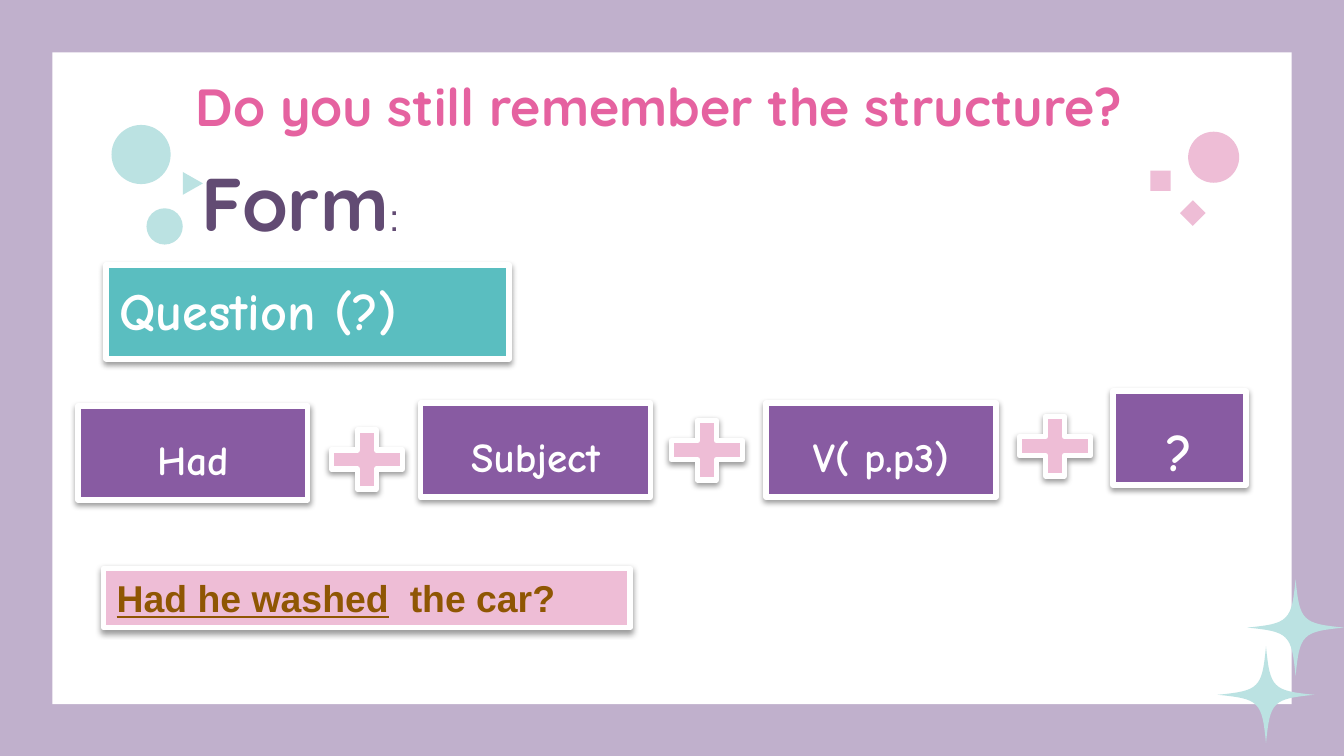
import math

from lxml import etree
from pptx import Presentation
from pptx.dml.color import RGBColor
from pptx.enum.shapes import MSO_SHAPE
from pptx.enum.text import MSO_ANCHOR, PP_ALIGN
from pptx.oxml.ns import qn
from pptx.util import Inches, Pt

RECTANGLE = MSO_SHAPE.RECTANGLE
OVAL = MSO_SHAPE.OVAL
DIAMOND = MSO_SHAPE.DIAMOND
TRIANGLE = MSO_SHAPE.ISOSCELES_TRIANGLE
PLUS = MSO_SHAPE.MATH_PLUS
TOP, MIDDLE = MSO_ANCHOR.TOP, MSO_ANCHOR.MIDDLE
LEFT, CENTER = PP_ALIGN.LEFT, PP_ALIGN.CENTER

LILAC = RGBColor(0xC0, 0xB0, 0xCC)
WHITE = RGBColor(0xFF, 0xFF, 0xFF)
HOT_PINK = RGBColor(0xE5, 0x62, 0xA0)
PINK = RGBColor(0xEE, 0xBD, 0xD6)
MINT = RGBColor(0xBB, 0xE2, 0xE2)
TEAL = RGBColor(0x5A, 0xBE, 0xC0)
PURPLE = RGBColor(0x88, 0x5B, 0xA2)
PLUM = RGBColor(0x62, 0x4B, 0x73)
BROWN = RGBColor(0x8F, 0x56, 0x03)

TERM_TOP_INSET = 0.21


def set_font(font, name, size, color, bold=True):
    font.name, font.size, font.bold = name, Pt(size), bold
    font.color.rgb = color


def set_frame(frame, anchor, inset=0.1, top=0.1, bottom=0.1):
    frame.word_wrap = True
    frame.vertical_anchor = anchor
    frame.margin_left = frame.margin_right = Inches(inset)
    frame.margin_top, frame.margin_bottom = Inches(top), Inches(bottom)


def add_plain(page, kind, at, color):
    shape = page.shapes.add_shape(kind, *map(Inches, at))
    shape.shadow.inherit = False
    shape.fill.solid()
    shape.fill.fore_color.rgb = color
    shape.line.fill.background()
    return shape


def add_raised(page, kind, at, color):
    """Add a shape with a white border and a soft shadow below it."""
    shape = add_plain(page, kind, at, color)
    shape.line.color.rgb = WHITE
    shape.line.width = Pt(3)
    effects = shape.element.spPr.find(qn("a:effectLst"))
    shadow = etree.SubElement(
        effects, qn("a:outerShdw"), blurRad=str(Pt(3.1)), dist=str(Pt(1.6)),
        dir="5400000", algn="t", rotWithShape="0")
    tint = etree.SubElement(shadow, qn("a:srgbClr"), val="000000")
    etree.SubElement(tint, qn("a:alpha"), val="38000")
    return shape


def add_label(page, at, color, text, size, align, top):
    box = add_raised(page, RECTANGLE, at, color)
    set_frame(box.text_frame, TOP, top=top, bottom=0)
    para = box.text_frame.paragraphs[0]
    para.text, para.alignment = text, align
    set_font(para.font, "Comic Neue", size, WHITE)


def add_sparkle(page, x, y, radius=0.36, steps=16):
    """Draw a four-pointed star around x, y; each side is a Bezier curve."""
    curve = [(0, -radius), (-0.03, -0.05), (-0.05, -0.03), (-radius, 0)]
    side = []
    for step in range(steps):
        t = step / steps
        weights = [math.comb(3, i) * t**i * (1 - t) ** (3 - i) for i in range(4)]
        side.append(tuple(sum(w * point[axis] for w, point in zip(weights, curve))
                          for axis in (0, 1)))
    points = []
    for _ in range(4):
        points += [(Inches(x + dx), Inches(y + dy)) for dx, dy in side]
        side = [(dy, -dx) for dx, dy in side]
    builder = page.shapes.build_freeform(*points[0])
    builder.add_line_segments(points[1:], close=True)
    star = builder.convert_to_shape()
    star.shadow.inherit = False
    star.fill.solid()
    star.fill.fore_color.rgb = MINT
    star.line.fill.background()


def add_title(page):
    title = page.shapes.title
    title.left, title.top = Inches(0.75), Inches(0.45)
    title.width, title.height = Inches(8.31), Inches(0.63)
    set_frame(title.text_frame, TOP)
    para = title.text_frame.paragraphs[0]
    para.text, para.alignment = "Do you still remember the structure?", CENTER
    set_font(para.font, "Quicksand", 28, HOT_PINK)


def add_decorations(page):
    add_plain(page, DIAMOND, (8.78, 1.49, 0.19, 0.19), PINK)
    add_plain(page, RECTANGLE, (8.56, 1.27, 0.15, 0.15), PINK)
    add_plain(page, OVAL, (8.84, 0.98, 0.38, 0.38), PINK)
    add_plain(page, OVAL, (0.83, 0.93, 0.44, 0.44), MINT)
    add_plain(page, OVAL, (1.09, 1.55, 0.27, 0.27), MINT)
    add_plain(page, TRIANGLE, (1.35, 1.29, 0.17, 0.15), MINT).rotation = 90
    add_sparkle(page, 9.64, 4.67)
    add_sparkle(page, 9.42, 5.17)


def add_form_heading(page):
    box = page.shapes.add_textbox(Inches(1.4), Inches(1.12), Inches(5), Inches(0.77))
    set_frame(box.text_frame, TOP, top=0.05, bottom=0.05)
    para = box.text_frame.paragraphs[0]
    word, colon = para.add_run(), para.add_run()
    word.text, colon.text = "Form", ":"
    set_font(word.font, "Quicksand", 40, PLUM)
    set_font(colon.font, "Arial", 20, PLUM, bold=False)


def add_formula(page):
    terms = [("Had", 0.58, 3.02, 1.71, 22), ("Subject", 3.13, 3, 1.71, 22),
             ("V( p.p3)", 5.7, 3, 1.71, 22), ("?", 8.28, 2.91, 0.99, 28)]
    for text, x, y, width, size in terms:
        add_label(page, (x, y, width, 0.7), PURPLE, text, size, CENTER,
                  TERM_TOP_INSET)
    for x, y in [(2.37, 3.12), (4.9, 3.05), (7.49, 3.02)]:
        add_raised(page, PLUS, (x, y, 0.72, 0.6), PINK)


def add_example(page):
    box = add_raised(page, RECTANGLE, (0.77, 4.23, 3.92, 0.44), PINK)
    set_frame(box.text_frame, MIDDLE, top=0.05, bottom=0.05)
    para = box.text_frame.paragraphs[0]
    para.alignment = LEFT
    set_font(para.font, "Arial", 20, BROWN)
    for text, underlined in [("Had he washed", True), ("  the car?", False)]:
        span = para.add_run()
        span.text = text
        span.font.underline = underlined


def main():
    deck = Presentation()
    deck.slide_width = Inches(10)
    deck.slide_height = deck.slide_width * 9 // 16
    page = deck.slides.add_slide(deck.slide_layouts[5])
    page.background.fill.solid()
    page.background.fill.fore_color.rgb = LILAC

    add_title(page)
    panel = add_plain(page, RECTANGLE, (0.39, 0.39, 9.22, 4.85), WHITE)
    page.shapes.title.element.addprevious(panel.element)
    add_decorations(page)
    add_formula(page)
    add_example(page)
    add_form_heading(page)
    add_label(page, (0.79, 1.97, 3, 0.7), TEAL, "Question (?)", 28, LEFT, 0.1)
    deck.save("out.pptx")


if __name__ == "__main__":
    main()
